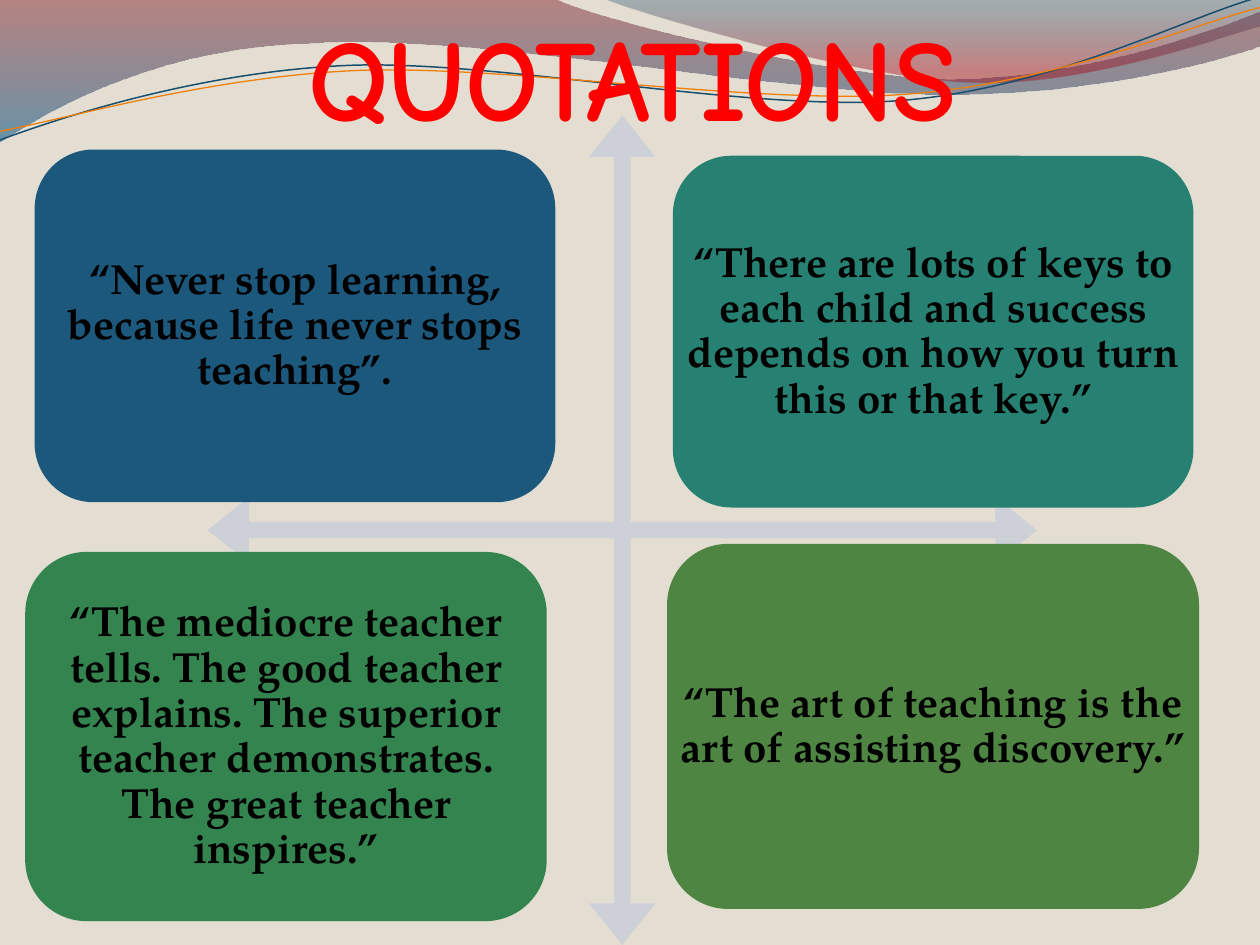
from math import cos, radians, sin

from pptx import Presentation
from pptx.dml.color import RGBColor
from pptx.enum.shapes import MSO_SHAPE as Kind
from pptx.enum.text import MSO_ANCHOR as Anchor, PP_ALIGN as Align
from pptx.oxml import parse_xml
from pptx.oxml.ns import nsdecls, qn
from pptx.util import Pt

TITLE = "QUOTATIONS"
QUOTES = [
    ("“Never stop learning, because life never stops teaching”.",
     (19.8, 85.5, 297.5, 201.5), "1B587C"),
    ("“There are lots of keys to each child and success depends on how you turn this or that key.”",
     (384.5, 89, 297.5, 201), "268173"),
    ("“The mediocre teacher tells. The good teacher explains. The superior teacher demonstrates. "
     "The great teacher inspires.”",
     (14.4, 315.4, 298, 211), "33844E"),
    ("“The art of teaching is the art of assisting discovery.”",
     (381.2, 310.8, 304, 208.6), "4E8542"),
]
BANDS = [
    ([(0, 0), (317, -0.7), (343, 12, 478, 45, 546, 45), (614, 45, 690, 19, 720, 6.5),
      (720.7, 26), (708, 32, 626, 55, 537, 54), (448, 54, 275, 20, 185, 24.5),
      (93, 26, 33, 60, -0.7, 81.4), (0, 0)],
     [(0, "7E1621", 45), (100, "005689", 55)]),
    ([(345, -0.7), (366, 8, 491, 45, 554, 47), (616, 50, 692, 23, 720, 15),
      (720, 0), (345, -0.7)],
     [(0, "094467", 30), (80, "A10F1F", 45)]),
]
WAVES = [
    ([(0, 80), (35, 67, 114, 41, 199, 37.4), (284, 34, 427, 64, 513, 57.6),
      (600, 51, 675, 11, 718.6, -1.4)], (359.3, 41.4), "184E6D", 0.85),
    ([(0, 75), (34, 69, 118, 44, 204, 40.3), (290, 37, 430, 60, 516, 54),
      (602, 48, 678, 15, 720, 4.3)], (359.7, 42.5), "F07F09", 0.75),
]
TILT = 2.7


def color(code):
    return RGBColor.from_string(code)


def pairs(seg):
    return list(zip(seg[::2], seg[1::2]))


def turn(seg, mid, angle):
    c, s = cos(radians(angle)), sin(radians(angle))
    out = []
    for x, y in pairs(seg):
        dx, dy = x - mid[0], y - mid[1]
        out += [mid[0] + dx * c - dy * s, mid[1] + dx * s + dy * c]
    return tuple(out)


def outline(slide, segs, close):
    dots = [(Pt(x), Pt(y)) for seg in segs for x, y in pairs(seg)]
    pen = slide.shapes.build_freeform(*dots[0])
    pen.add_line_segments(dots[1:], close=close)
    shape = pen.convert_to_shape()
    shape.shadow.inherit = False
    lines = iter(list(shape.element.iter(qn("a:lnTo"))))
    for seg in segs[1:]:
        group = [next(lines) for _ in pairs(seg)]
        if len(group) == 3:
            curve = parse_xml(f'<a:cubicBezTo {nsdecls("a")}/>')
            group[0].addprevious(curve)
            for line in group:
                curve.append(line[0])
                line.getparent().remove(line)
    return shape


def add_band(slide, segs, stops):
    shape = outline(slide, segs, True)
    shape.line.fill.background()
    marks = "".join(
        f'<a:gs pos="{pos * 1000}"><a:srgbClr val="{code}">'
        f'<a:alpha val="{alpha * 1000}"/></a:srgbClr></a:gs>'
        for pos, code, alpha in stops)
    grad = parse_xml(f'<a:gradFill {nsdecls("a")}><a:gsLst>{marks}</a:gsLst>'
                     '<a:lin ang="5400000" scaled="0"/></a:gradFill>')
    shape.element.spPr.find(qn("a:ln")).addprevious(grad)


def add_wave(slide, segs, mid, code, width):
    shape = outline(slide, [turn(seg, mid, TILT) for seg in segs], False)
    shape.rotation = 360 - TILT
    shape.fill.background()
    shape.line.color.rgb = color(code)
    shape.line.width = Pt(width)


def add_shape(slide, kind, box, code):
    shape = slide.shapes.add_shape(kind, *map(Pt, box))
    shape.shadow.inherit = False
    shape.fill.solid()
    shape.fill.fore_color.rgb = color(code)
    shape.line.fill.background()
    return shape


def add_text(slide, box, text, face, size, code, anchor, pads, space=None):
    frame = slide.shapes.add_textbox(*map(Pt, box)).text_frame
    frame.word_wrap = True
    frame.vertical_anchor = anchor
    (frame.margin_left, frame.margin_top,
     frame.margin_right, frame.margin_bottom) = map(Pt, pads)
    para = frame.paragraphs[0]
    para.alignment = Align.CENTER
    para.line_spacing = space
    run = para.add_run()
    run.text = text
    font = run.font
    font.name, font.size, font.bold = face, Pt(size), True
    font.color.rgb = color(code)


def main():
    deck = Presentation()
    deck.slide_width, deck.slide_height = Pt(720), Pt(540)
    slide = deck.slides.add_slide(deck.slide_layouts[6])
    back = slide.background.fill
    back.solid()
    back.fore_color.rgb = color("E3DED1")
    for band in BANDS:
        add_band(slide, *band)
    for wave in WAVES:
        add_wave(slide, *wave)
    cross = add_shape(slide, Kind.QUAD_ARROW, (118.6, 66, 474, 474), "CDD1D7")
    for i, ratio in enumerate((0.02, 0.04, 0.05)):
        cross.adjustments[i] = ratio
    for text, box, code in QUOTES:
        add_shape(slide, Kind.ROUNDED_RECTANGLE, box, code)
        add_text(slide, box, text, "TeX Gyre Pagella", 24, "000000",
                 Anchor.MIDDLE, (7.2, 7.2, 7.2, 7.2), 0.9)
    add_text(slide, (76.3, 15.1, 570.2, 67.7), TITLE, "Comic Neue", 66, "FF0000",
             Anchor.BOTTOM, (0, 3.6, 0, 0))
    deck.save("out.pptx")


if __name__ == "__main__":
    main()
